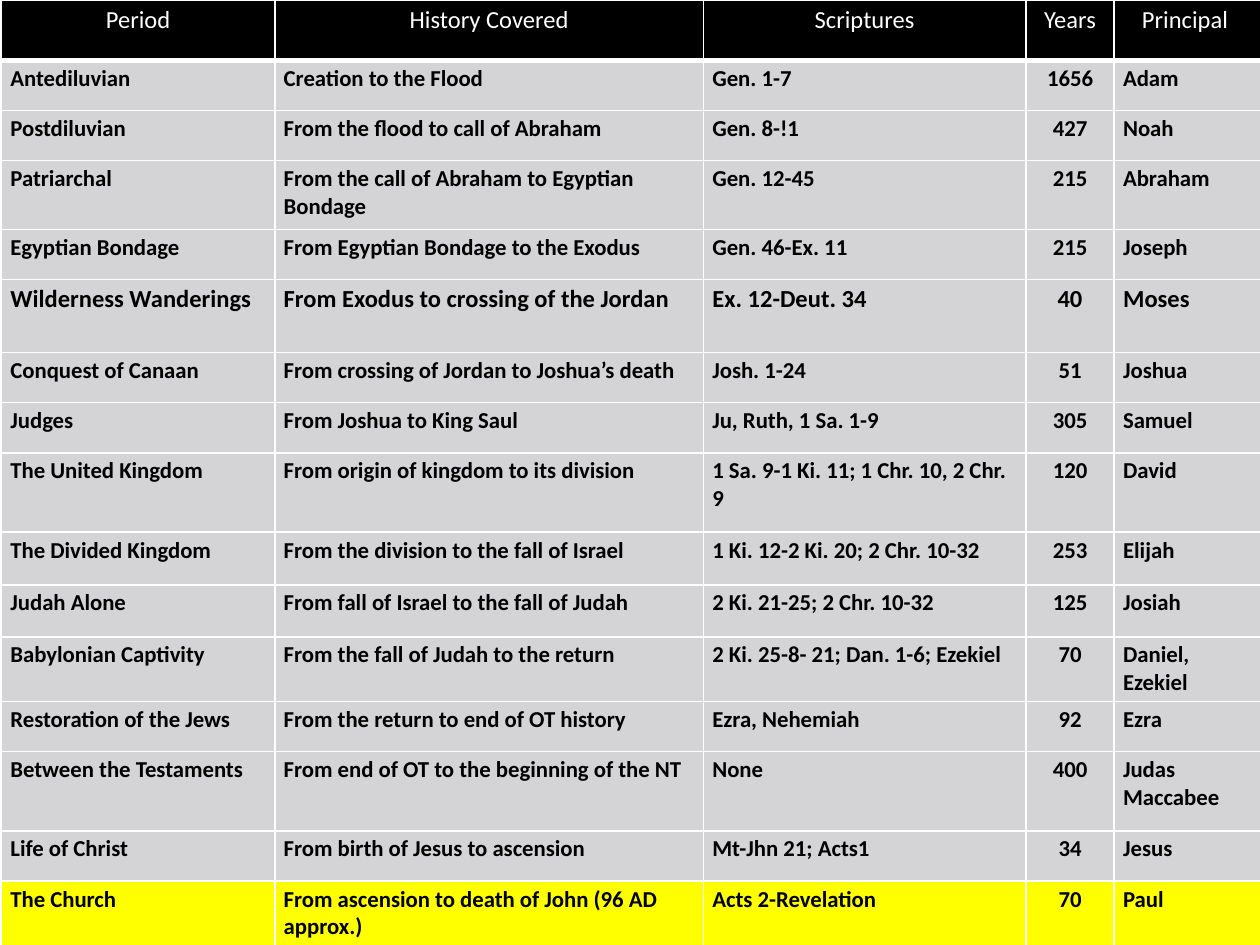
import dataclasses

import pptx
import pptx.dml.color
import pptx.enum.text
import pptx.oxml
import pptx.oxml.ns
import pptx.util

Cm = pptx.util.Cm
Align = pptx.enum.text.PP_ALIGN


@dataclasses.dataclass(frozen=True)
class Theme:
    font: str = "Calibri"
    header_fill: str = "000000"
    header_text: str = "FFFFFF"
    body_fill: str = "D4D4D6"
    highlight_fill: str = "FFFF00"
    body_text: str = "000000"
    rule: str = "FFFFFF"
    large: int = 14
    normal: int = 13
    thin: int = 1
    thick: int = 3


HEADINGS = ("Period", "History Covered", "Scriptures", "Years", "Principal ")
COLUMN_WIDTHS = (5.51, 8.64, 6.5, 1.78, 2.97)
YEARS_COLUMN = HEADINGS.index("Years")
HEADER_HEIGHT = 1.21
ENLARGED_PERIOD = "Wilderness Wanderings"
HIGHLIGHTED_PERIOD = "The Church"

# Row height in cm, then the cells of the row
PERIODS = (
    (1.01, "Antediluvian", "Creation to the Flood", "Gen. 1-7", "1656", "Adam"),
    (1.01, "Postdiluvian", "From the flood to call of Abraham", "Gen. 8-!1", "427", "Noah"),
    (1.39, "Patriarchal", "From the call of Abraham to Egyptian Bondage", "Gen. 12-45", "215", "Abraham"),
    (1.01, "Egyptian Bondage", "From Egyptian Bondage to the Exodus", "Gen. 46-Ex. 11", "215", "Joseph"),
    (1.47, "Wilderness Wanderings", "From Exodus to crossing of the Jordan", "Ex. 12-Deut. 34", "40", "Moses"),
    (1.01, "Conquest of Canaan", "From crossing of Jordan to Joshua’s death", "Josh. 1-24", "51", "Joshua"),
    (1.01, "Judges", "From Joshua to King Saul", "Ju, Ruth, 1 Sa. 1-9", "305", "Samuel"),
    (1.6, "The United Kingdom", "From origin of kingdom to its division",
     "1 Sa. 9-1 Ki. 11; 1 Chr. 10, 2 Chr. 9", "120", "David"),
    (1.06, "The Divided Kingdom", "From the division to the fall of Israel",
     "1 Ki. 12-2 Ki. 20; 2 Chr. 10-32", "253", "Elijah"),
    (1.05, "Judah Alone", "From fall of Israel to the fall of Judah", "2 Ki. 21-25; 2 Chr. 10-32", "125", "Josiah"),
    (1.14, "Babylonian Captivity", "From the fall of Judah to the return",
     "2 Ki. 25-8- 21; Dan. 1-6; Ezekiel", "70", "Daniel, Ezekiel"),
    (1.01, "Restoration of the Jews", "From the return to end of OT history", "Ezra, Nehemiah", "92", "Ezra"),
    (1.6, "Between the Testaments", "From end of OT to the beginning of the NT", "None", "400", "Judas Maccabee"),
    (1.01, "Life of Christ", "From birth of Jesus to ascension", "Mt-Jhn 21; Acts1", "34", "Jesus"),
    (1.39, "The Church", "From ascension to death of John (96 AD approx.)", "Acts 2-Revelation", "70", "Paul"),
)


def write_text(frame, text, *, font, size, color, bold=False, align=Align.LEFT):
    paragraph = frame.paragraphs[0]
    paragraph.alignment = align
    run = paragraph.add_run()
    run.text = text
    run.font.name = font
    run.font.size = pptx.util.Pt(size)
    run.font.bold = bold
    run.font.color.rgb = pptx.dml.color.RGBColor.from_string(color)


class SlideBuilder:
    def __init__(self, slide, theme):
        self.slide = slide
        self.theme = theme

    def table(self, left, top, widths, heights):
        frame = self.slide.shapes.add_table(
            len(heights), len(widths), Cm(left), Cm(top), Cm(sum(widths)), Cm(sum(heights)))
        table = frame.table
        for column, width in zip(table.columns, widths):
            column.width = Cm(width)
        for row, height in zip(table.rows, heights):
            row.height = Cm(height)
        return table

    def borders(self, cell, bottom):
        """Rule all four sides; must run before the fill, which follows in the XML."""
        properties = cell._tc.get_or_add_tcPr()
        thin = self.theme.thin
        for side, width in (("L", thin), ("R", thin), ("T", thin), ("B", bottom)):
            properties.append(pptx.oxml.parse_xml(
                f'<a:ln{side} {pptx.oxml.ns.nsdecls("a")} w="{pptx.util.Pt(width)}">'
                f'<a:solidFill><a:srgbClr val="{self.theme.rule}"/></a:solidFill>'
                f'</a:ln{side}>'))

    def cell(self, cell, text, fill, bottom, **text_format):
        self.borders(cell, bottom)
        cell.fill.solid()
        cell.fill.fore_color.rgb = pptx.dml.color.RGBColor.from_string(fill)
        cell.margin_left = cell.margin_right = Cm(0.18)
        cell.margin_top = cell.margin_bottom = Cm(0.09)
        write_text(cell.text_frame, text, font=self.theme.font, **text_format)

    def header_row(self, table):
        theme = self.theme
        for column, heading in enumerate(HEADINGS):
            self.cell(table.cell(0, column), heading, theme.header_fill, theme.thick,
                      size=theme.large, color=theme.header_text, align=Align.CENTER)

    def period_row(self, table, row, values):
        theme = self.theme
        period = values[0]
        fill = theme.highlight_fill if period == HIGHLIGHTED_PERIOD else theme.body_fill
        size = theme.large if period == ENLARGED_PERIOD else theme.normal
        for column, value in enumerate(values):
            align = Align.CENTER if column == YEARS_COLUMN else Align.LEFT
            self.cell(table.cell(row, column), value, fill, theme.thin,
                      size=size, color=theme.body_text, bold=True, align=align)


def main():
    presentation = pptx.Presentation()
    presentation.slide_width = Cm(25.4)
    presentation.slide_height = Cm(19.05)
    blank = presentation.slide_layouts[6]
    builder = SlideBuilder(presentation.slides.add_slide(blank), Theme())

    heights = [HEADER_HEIGHT] + [height for height, *_ in PERIODS]
    timeline = builder.table(0.03, 0.01, COLUMN_WIDTHS, heights)
    builder.header_row(timeline)
    for row, (_, *values) in enumerate(PERIODS, start=1):
        builder.period_row(timeline, row, values)

    presentation.save("out.pptx")


if __name__ == "__main__":
    main()
